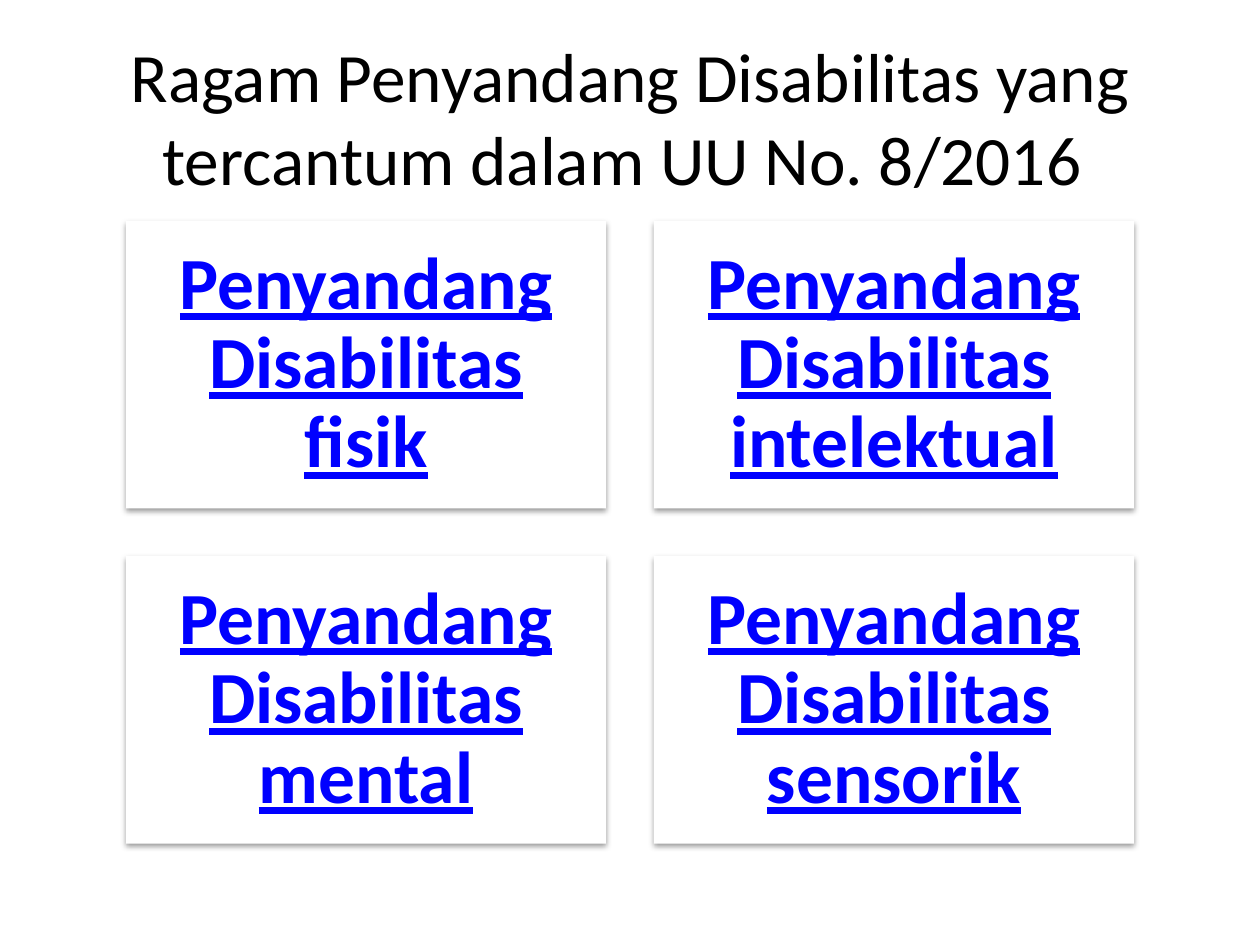
from lxml.etree import SubElement
from pptx import Presentation
from pptx.dml.color import RGBColor
from pptx.enum.shapes import MSO_SHAPE
from pptx.enum.text import MSO_ANCHOR, PP_ALIGN
from pptx.oxml.ns import qn
from pptx.util import Pt

TITLE = "Ragam Penyandang Disabilitas yang tercantum dalam UU No. 8/2016 "
CATEGORIES = [
    "Penyandang Disabilitas fisik",
    "Penyandang Disabilitas intelektual",
    "Penyandang Disabilitas mental",
    "Penyandang Disabilitas sensorik",
]
COLORS = {"title": "000000", "link": "0000FF", "card": "FFFFFF", "shadow": "000000"}
FONT = "Calibri"
COLUMNS = 2
GRID_LEFT, GRID_TOP = 72, 126.25
CARD_WIDTH, CARD_HEIGHT = 274.3, 164.2
GAP = 27.4


def write_text(frame, text, size, color, bold=False, underline=False, spacing=None, inset=None):
    frame.word_wrap = True
    frame.vertical_anchor = MSO_ANCHOR.MIDDLE
    if inset is not None:
        frame.margin_left = frame.margin_right = Pt(inset)
        frame.margin_top = frame.margin_bottom = Pt(inset)
    paragraph = frame.paragraphs[0]
    paragraph.alignment = PP_ALIGN.CENTER
    paragraph.line_spacing = spacing
    run = paragraph.add_run()
    run.text = text
    run.font.name = FONT
    run.font.size = Pt(size)
    run.font.bold = bold
    run.font.underline = underline
    run.font.color.rgb = RGBColor.from_string(COLORS[color])


def add_shadow(card):
    card.shadow.inherit = False
    effects = card._element.spPr.find(qn("a:effectLst"))
    shadow = SubElement(effects, qn("a:outerShdw"), blurRad=str(Pt(3.1)),
                        dist=str(Pt(1.6)), dir="5400000", rotWithShape="0")
    tint = SubElement(shadow, qn("a:srgbClr"), val=COLORS["shadow"])
    SubElement(tint, qn("a:alpha"), val="38000")


def add_card(slide, index, category):
    row, column = divmod(index, COLUMNS)
    card = slide.shapes.add_shape(
        MSO_SHAPE.RECTANGLE,
        Pt(GRID_LEFT + column * (CARD_WIDTH + GAP)),
        Pt(GRID_TOP + row * (CARD_HEIGHT + GAP)),
        Pt(CARD_WIDTH), Pt(CARD_HEIGHT),
    )
    card.fill.solid()
    card.fill.fore_color.rgb = RGBColor.from_string(COLORS["card"])
    card.line.fill.background()
    add_shadow(card)
    write_text(card.text_frame, category, size=42, color="link", bold=True,
               underline=True, spacing=0.9, inset=12.6)


def main():
    deck = Presentation()
    deck.slide_width, deck.slide_height = Pt(720), Pt(540)
    slide = deck.slides.add_slide(deck.slide_layouts[5])
    title = slide.shapes.title
    title.left, title.top, title.width, title.height = Pt(36), Pt(21.6), Pt(648), Pt(90)
    write_text(title.text_frame, TITLE, size=39.6, color="title")
    for index, category in enumerate(CATEGORIES):
        add_card(slide, index, category)
    deck.save("out.pptx")


if __name__ == "__main__":
    main()
